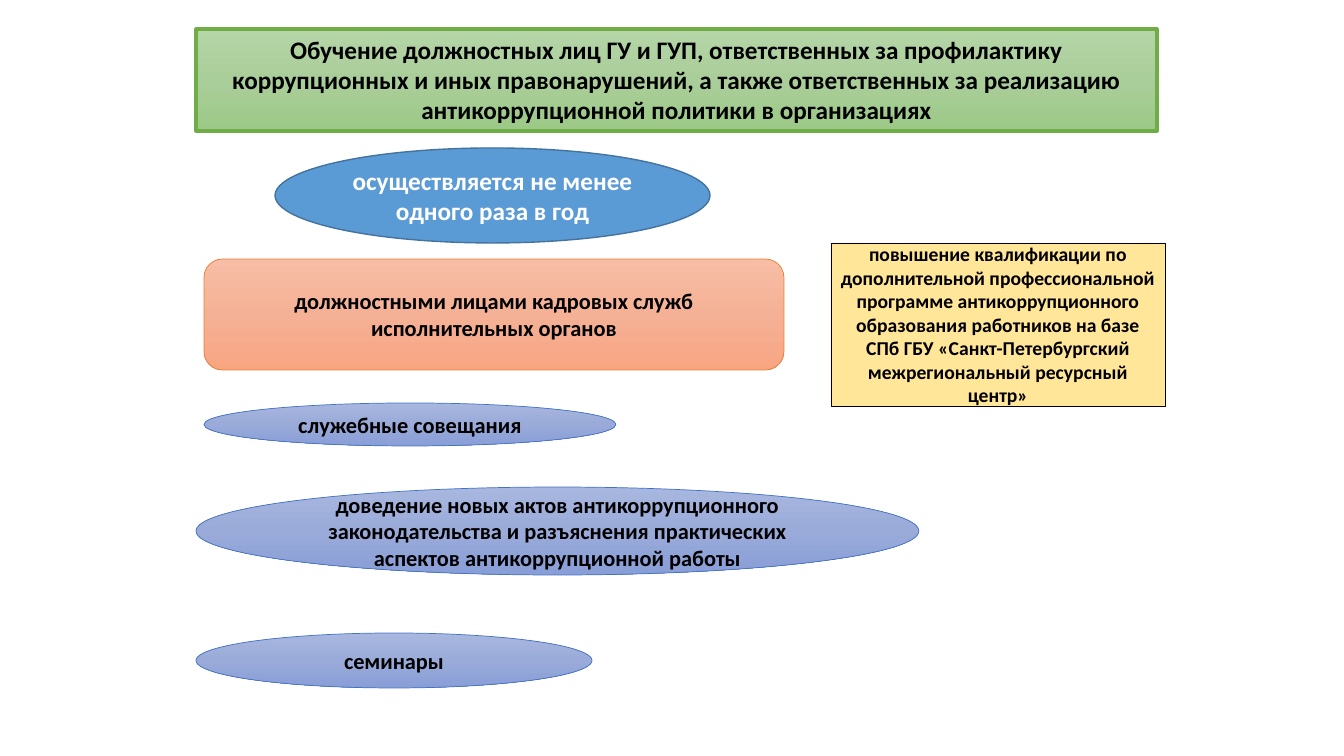
from copy import deepcopy

from pptx import Presentation
from pptx.dml.color import RGBColor
from pptx.enum.shapes import MSO_SHAPE
from pptx.enum.text import MSO_ANCHOR, MSO_AUTO_SIZE, PP_ALIGN
from pptx.oxml.ns import qn
from pptx.util import Pt

RECT, OVAL, ROUND = MSO_SHAPE.RECTANGLE, MSO_SHAPE.OVAL, MSO_SHAPE.ROUNDED_RECTANGLE
TOP, MIDDLE = MSO_ANCHOR.TOP, MSO_ANCHOR.MIDDLE
CENTER = PP_ALIGN.CENTER
NO_FIT = MSO_AUTO_SIZE.NONE
TITLE_ONLY = 5

GREEN = ["B5D5A7", "AACE9A", "9CC987"]
ORANGE = ["F7BDA5", "F5B196", "F8A582"]
BLUE = ["A8B7DF", "9AABD9", "889ED7"]

METHODS = [
    ("служебные совещания", (204, 403, 412, 43)),
    ("семинары", (196, 633, 396, 55)),
    ("доведение новых актов антикоррупционного законодательства "
     "и разъяснения практических аспектов антикоррупционной работы",
     (196, 487, 723, 88)),
]


def px(n):
    return round(n * 9144000 / 1008)


def rgb(value):
    return RGBColor.from_string(value)


class Deck:
    font = "Calibri"

    def __init__(self):
        self.prs = Presentation()
        self.prs.slide_width, self.prs.slide_height = px(1344), px(756)
        self.s = self.prs.slides.add_slide(self.prs.slide_layouts[TITLE_ONLY])

    def paint(self, sp, fill, line, weight):
        if isinstance(fill, str):
            sp.fill.solid()
            sp.fill.fore_color.rgb = rgb(fill)
        else:
            sp.fill.gradient()
            sp.fill.gradient_angle = 270
            stops = sp._element.spPr.find(qn("a:gradFill")).find(qn("a:gsLst"))
            stops.insert(1, deepcopy(stops[0]))
            for i, stop in enumerate(sp.fill.gradient_stops):
                stop.position = i / 2
                stop.color.rgb = rgb(fill[i])
        sp.line.color.rgb = rgb(line)
        sp.line.width = Pt(weight)

    def label(self, sp, text, size, color, anchor):
        tf = sp.text_frame
        tf.text = text
        tf.word_wrap = True
        tf.auto_size = NO_FIT
        tf.vertical_anchor = anchor
        p = tf.paragraphs[0]
        p.alignment = CENTER
        for r in p.runs:
            r.font.name = self.font
            r.font.size = Pt(size)
            r.font.bold = True
            r.font.color.rgb = rgb(color)

    def title(self, text, box, fill, line, weight, size):
        sp = self.s.shapes.title
        sp.left, sp.top, sp.width, sp.height = map(px, box)
        self.paint(sp, fill, line, weight)
        self.label(sp, text, size, "000000", TOP)

    def shape(self, kind, text, box, fill, line, weight=0.5, size=16, color="000000"):
        sp = self.s.shapes.add_shape(kind, *map(px, box))
        sp.shadow.inherit = False
        self.paint(sp, fill, line, weight)
        self.label(sp, text, size, color, MIDDLE)


def main():
    deck = Deck()
    deck.title("Обучение должностных лиц ГУ и ГУП, ответственных за профилактику "
               "коррупционных и иных правонарушений, а также ответственных за "
               "реализацию антикоррупционной политики в организациях",
               (196, 29, 961, 102), GREEN, "70AD47", 2.25, 18)
    deck.shape(OVAL, "осуществляется не менее одного раза в год",
               (275, 148, 435, 95), "5B9BD5", "43739E", 1, 18, "FFFFFF")
    deck.shape(ROUND, "должностными лицами кадровых служб исполнительных органов",
               (204, 259, 580, 111), ORANGE, "ED7D31")
    for text, box in METHODS:
        deck.shape(OVAL, text, box, BLUE, "4472C4")
    deck.shape(RECT, "повышение квалификации по дополнительной профессиональной "
               "программе антикоррупционного образования работников на базе "
               "СПб ГБУ «Санкт-Петербургский межрегиональный ресурсный центр»",
               (831, 243, 334, 163), "FFE699", "000000", size=14)
    deck.prs.save("out.pptx")


if __name__ == "__main__":
    main()
